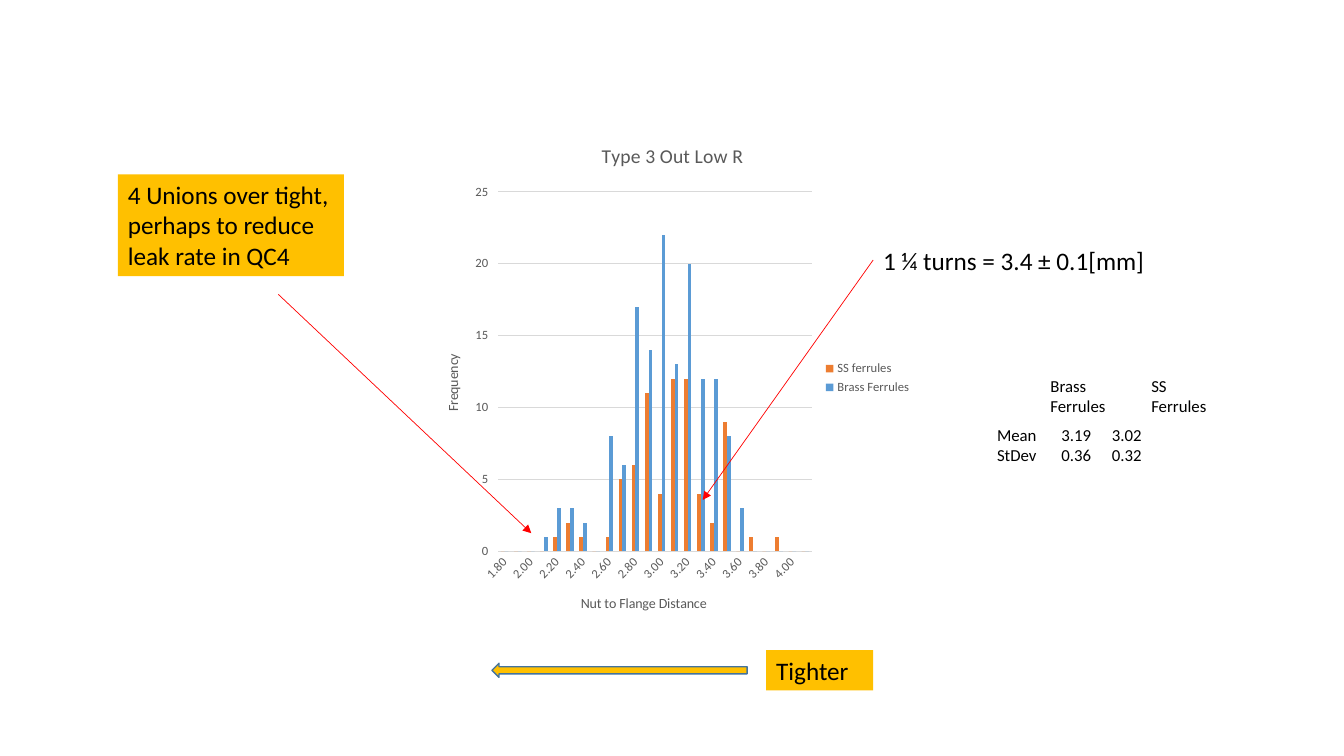
from lxml import etree
from pptx import Presentation
from pptx.chart.data import CategoryChartData
from pptx.dml.color import RGBColor
from pptx.enum.chart import XL_CHART_TYPE, XL_LEGEND_POSITION, XL_TICK_MARK
from pptx.enum.shapes import MSO_CONNECTOR, MSO_SHAPE
from pptx.enum.text import MSO_ANCHOR, PP_ALIGN
from pptx.oxml import parse_xml
from pptx.oxml.ns import qn
from pptx.util import Inches, Pt

COLUMNS = XL_CHART_TYPE.COLUMN_CLUSTERED
LEGEND_RIGHT = XL_LEGEND_POSITION.RIGHT
NO_TICK, TICK_OUT = XL_TICK_MARK.NONE, XL_TICK_MARK.OUTSIDE
STRAIGHT = MSO_CONNECTOR.STRAIGHT
LEFT_ARROW = MSO_SHAPE.LEFT_ARROW
LEFT, TOP = PP_ALIGN.LEFT, MSO_ANCHOR.TOP

WIDTH, HEIGHT = 13.33, 7.5
FONT = "Calibri"
BLACK, GREY, RULE, GOLD, RED = "000000", "595959", "D9D9D9", "FFC000", "FF0000"

DISTANCES = [round(1.8 + step / 10, 1) for step in range(24)]
FERRULES = [
    ("SS ferrules", "ED7D31",
     [0, 0, 0, 0, 1, 2, 1, 0, 1, 5, 6, 11, 4, 12, 12, 4, 2, 9, 0, 1, 0, 1, 0, 0]),
    ("Brass Ferrules", "5B9BD5",
     [0, 0, 0, 1, 3, 3, 2, 0, 8, 6, 17, 14, 22, 13, 20, 12, 12, 8, 3, 0, 0, 0, 0, 0]),
]
CHART_AREA = (4.2, 1.22, 4.94, 5.06)
PLOT_SHARES = {"x": 0.15, "y": 0.135, "w": 0.63, "h": 0.705}
TIGHTER_ARROW = (4.88, 6.58, 2.53, 0.14)
TURNS = "1 ¼ turns = 3.4 ± 0.1[mm]"
STAT_HEAD, STAT_BODY, STAT_HEIGHT = 3.68, 4.16, 0.5
NOTES = [
    (["Tighter"], (7.6, 6.45, 1.06, 0.4), 18, GOLD),
    ([TURNS], (8.66, 2.38, 3.17, 0.4), 18, None),
    (["Brass Ferrules"], (10.32, STAT_HEAD, 0.77, STAT_HEIGHT), 12, None),
    (["SS Ferrules"], (11.32, STAT_HEAD, 0.81, STAT_HEIGHT), 12, None),
    (["Mean", "StDev"], (9.79, STAT_BODY, 0.81, STAT_HEIGHT), 12, None),
    (["3.19\t3.02", "0.36\t0.32"], (10.43, STAT_BODY, 1.8, STAT_HEIGHT), 12, None),
    (["4 Unions over tight, perhaps to reduce leak rate in QC4"],
     (1.17, 1.73, 2.24, 1.01), 18, GOLD),
]
POINTERS = [
    ((8.66, 2.58), (6.97, 4.96), TURNS),
    ((2.76, 2.92), (5.27, 5.29), None),
]


def color(value):
    return RGBColor.from_string(value)


def inches(values):
    return [Inches(value) for value in values]


def style_font(font, size, value):
    font.name, font.size, font.bold = FONT, Pt(size), False
    font.color.rgb = color(value)


def style_line(line, value, width):
    line.color.rgb, line.width = color(value), Pt(width)


def set_title(holder, words, size):
    holder.has_title = True
    title = holder.chart_title if hasattr(holder, "chart_title") else holder.axis_title
    span = title.text_frame.paragraphs[0].add_run()
    span.text = words
    style_font(span.font, size, GREY)


def add_histogram(page):
    data = CategoryChartData(number_format="0")
    data.categories = DISTANCES
    data.categories.number_format = "0.00"
    for name, _, counts in FERRULES:
        data.add_series(name, counts)
    chart = page.shapes.add_chart(COLUMNS, *inches(CHART_AREA), data).chart
    style_font(chart.font, 10, BLACK)
    set_title(chart, "Type 3 Out Low R", 14)
    chart.has_legend = True
    chart.legend.position, chart.legend.include_in_layout = LEGEND_RIGHT, False
    style_font(chart.legend.font, 9, GREY)

    plot = chart.plots[0]
    plot.gap_width, plot.overlap, plot.vary_by_categories = 150, 0, False
    for series, (_, fill, _) in zip(plot.series, FERRULES):
        series.format.fill.solid()
        series.format.fill.fore_color.rgb = color(fill)

    across, up = chart.category_axis, chart.value_axis
    for axis, words, tick, digits in (
        (across, "Nut to Flange Distance", NO_TICK, "0.00"),
        (up, "Frequency", TICK_OUT, "0"),
    ):
        set_title(axis, words, 10)
        axis.major_tick_mark, axis.minor_tick_mark = tick, NO_TICK
        style_font(axis.tick_labels.font, 9, GREY)
        axis.tick_labels.number_format = digits
        axis.tick_labels.number_format_is_linked = False
    style_line(across.format.line, RULE, 0.75)
    up.format.line.fill.background()
    up.minimum_scale, up.maximum_scale, up.major_unit = 0, 25, 5
    style_line(up.major_gridlines.format.line, RULE, 0.75)

    root = chart.element
    labels = root.find(".//" + qn("c:catAx")).find(qn("c:txPr"))
    labels.find(qn("a:bodyPr")).set("rot", "-2700000")
    skip = etree.Element(qn("c:tickLblSkip"), val="2")
    root.find(".//" + qn("c:catAx")).find(qn("c:noMultiLvlLbl")).addprevious(skip)
    area = root.find(".//" + qn("c:plotArea"))
    for old in area.findall(qn("c:layout")):
        area.remove(old)
    shares = "".join(f'<c:{key} val="{share}"/>' for key, share in PLOT_SHARES.items())
    area.insert(0, parse_xml(
        '<c:layout xmlns:c="http://schemas.openxmlformats.org/drawingml/2006/chart">'
        '<c:manualLayout><c:layoutTarget val="inner"/><c:xMode val="edge"/>'
        f'<c:yMode val="edge"/>{shares}</c:manualLayout></c:layout>'))


def add_tighter_arrow(page):
    arrow = page.shapes.add_shape(LEFT_ARROW, *inches(TIGHTER_ARROW))
    arrow.shadow.inherit = False
    arrow.fill.solid()
    arrow.fill.fore_color.rgb = color(GOLD)
    style_line(arrow.line, "43739E", 1)


def add_note(page, lines, area, size, fill):
    box = page.shapes.add_textbox(*inches(area))
    if fill:
        box.fill.solid()
        box.fill.fore_color.rgb = color(fill)
    frame = box.text_frame
    frame.word_wrap, frame.vertical_anchor = True, TOP
    for index, line in enumerate(lines):
        para = frame.add_paragraph() if index else frame.paragraphs[0]
        para.alignment = LEFT
        span = para.add_run()
        span.text = line
        style_font(span.font, size, BLACK)
    return box


def add_pointer(page, start, end, source):
    pointer = page.shapes.add_connector(STRAIGHT, *inches(start + end))
    if source:
        pointer.begin_connect(source, 1)
    style_line(pointer.line, RED, 0.5)
    etree.SubElement(pointer.line._get_or_add_ln(), qn("a:tailEnd"), type="triangle")
    etree.SubElement(pointer._element.spPr, qn("a:effectLst"))


def main():
    deck = Presentation()
    deck.slide_width, deck.slide_height = Inches(WIDTH), Inches(HEIGHT)
    page = deck.slides.add_slide(deck.slide_layouts[6])
    add_histogram(page)
    add_tighter_arrow(page)
    boxes = {note[0][0]: add_note(page, *note) for note in NOTES}
    for start, end, source in POINTERS:
        add_pointer(page, start, end, boxes.get(source))
    deck.save("out.pptx")


if __name__ == "__main__":
    main()
